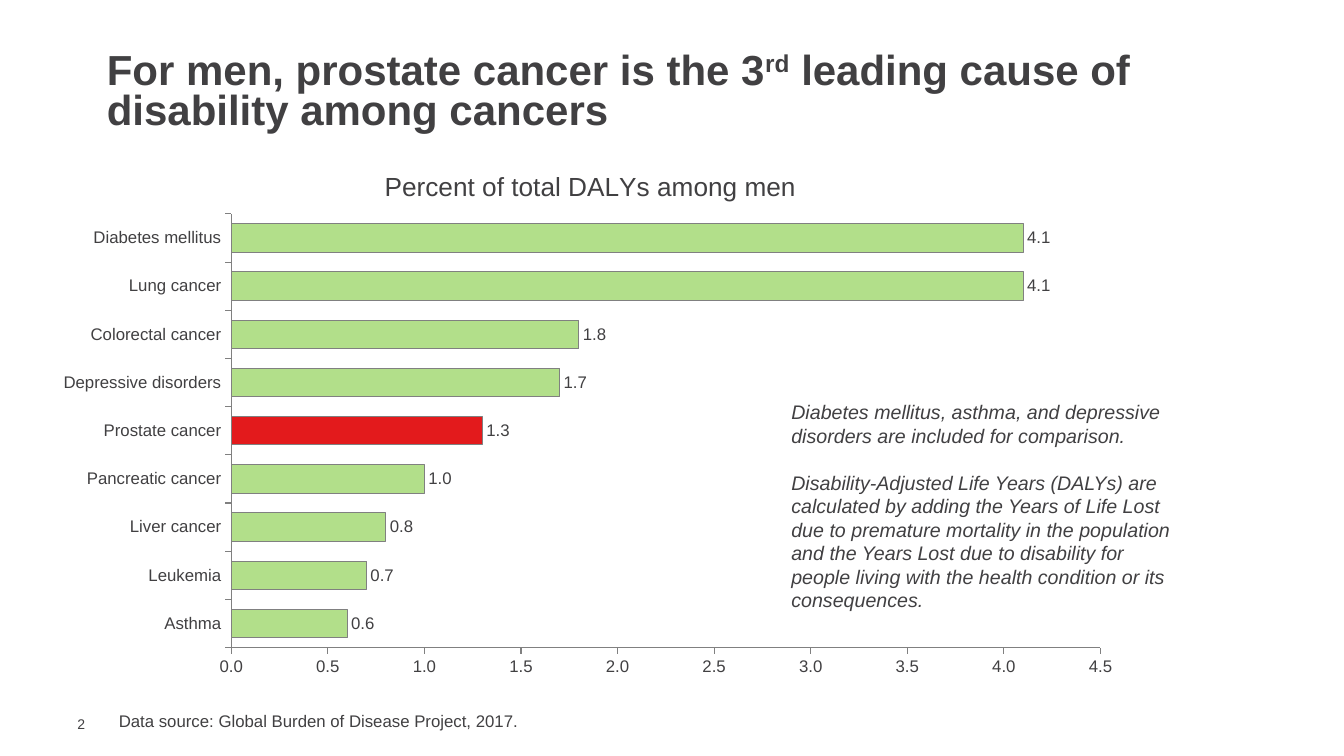
from lxml import etree
from pptx import Presentation
from pptx.chart.data import CategoryChartData
from pptx.dml.color import RGBColor
from pptx.enum.chart import (XL_CHART_TYPE as ChartType, XL_LABEL_POSITION as LabelPosition,
                             XL_TICK_MARK as TickMark)
from pptx.enum.text import MSO_ANCHOR as Anchor, PP_ALIGN as Align
from pptx.oxml.ns import qn
from pptx.util import Inches, Pt

INK, GREEN, RED, GRAY = "414042", "B2DF8A", "E31A1C", "808080"
DALYS = {
    "Asthma": 0.6,
    "Leukemia": 0.7,
    "Liver cancer": 0.8,
    "Pancreatic cancer": 1.0,
    "Prostate cancer": 1.3,
    "Depressive disorders": 1.7,
    "Colorectal cancer": 1.8,
    "Lung cancer": 4.1,
    "Diabetes mellitus": 4.1,
}
HIGHLIGHT = "Prostate cancer"


def paint(color_format, hex_color):
    color_format.rgb = RGBColor.from_string(hex_color)


def assign(target, values):
    for name, value in values.items():
        setattr(target, name, value)


def style_font(font, size, **extra):
    assign(font, {"name": "Arial", "size": Pt(size), **extra})
    paint(font.color, INK)


def style_line(line):
    line.width = Pt(0.75)
    paint(line.color, GRAY)


def place(part, box):
    assign(part, dict(zip(("left", "top", "width", "height"), map(Inches, box))))


def set_layout(parent, before, values):
    layout = etree.Element(qn("c:layout"))
    manual = etree.SubElement(layout, qn("c:manualLayout"))
    for tag, value in values.items():
        etree.SubElement(manual, qn(f"c:{tag}")).set("val", str(value))
    for old in parent.findall(qn("c:layout")):
        parent.remove(old)
    parent.find(qn(before)).addprevious(layout)


def add_heading(slide, box):
    heading = slide.shapes.title
    place(heading, box)
    frame = heading.text_frame
    assign(frame, {"word_wrap": True, "vertical_anchor": Anchor.MIDDLE})
    paragraph = frame.paragraphs[0]
    assign(paragraph, {"alignment": Align.LEFT, "line_spacing": 0.8})
    for words, baseline in (("For men, prostate cancer is the 3", 0), ("rd", 30000),
                            (" leading cause of disability among cancers", 0)):
        run = paragraph.add_run()
        run.text = words
        style_font(run.font, 30, bold=True)
        if baseline:
            run.font._element.set("baseline", str(baseline))


def add_text(slide, box, paragraphs, size, frame_format=None, gap_before_last=0, **font):
    frame = slide.shapes.add_textbox(*map(Inches, box)).text_frame
    assign(frame, {"word_wrap": True, **(frame_format or {})})
    frame.text = "\n".join(paragraphs)
    for paragraph in frame.paragraphs:
        style_font(paragraph.runs[0].font, size, **font)
    if gap_before_last:
        frame.paragraphs[-1].space_before = Pt(gap_before_last)


def add_daly_chart(slide, box):
    data = CategoryChartData(number_format="#,##0.0")
    data.categories = list(DALYS)
    data.add_series("Series 1", list(DALYS.values()))
    chart = slide.shapes.add_chart(ChartType.BAR_CLUSTERED, *map(Inches, box), data).chart
    chart.has_legend = False
    style_font(chart.font, 10)

    caption = chart.chart_title
    caption.text_frame.text = "Percent of total DALYs among men"
    style_font(caption.text_frame.paragraphs[0].runs[0].font, 18.7, bold=False)
    caption.include_in_layout = False
    set_layout(caption._element, "c:overlay",
               {"xMode": "edge", "yMode": "edge", "x": 0.31, "y": 0.04})
    set_layout(chart._chartSpace.chart.plotArea, "c:barChart",
               {"layoutTarget": "inner", "xMode": "edge", "yMode": "edge",
                "x": 0.174, "y": 0.13, "w": 0.796, "h": 0.797})

    for axis in (chart.category_axis, chart.value_axis):
        assign(axis, {"has_major_gridlines": False, "major_tick_mark": TickMark.OUTSIDE,
                      "minor_tick_mark": TickMark.NONE})
        style_font(axis.tick_labels.font, 12)
        style_line(axis.format.line)
    assign(chart.value_axis, {"minimum_scale": 0, "maximum_scale": 4.5, "major_unit": 0.5})
    number_format = {"number_format": "#,##0.0", "number_format_is_linked": False}
    assign(chart.value_axis.tick_labels, number_format)

    plot = chart.plots[0]
    assign(plot, {"gap_width": 70, "vary_by_categories": False})
    bars = plot.series[0]
    highlight = bars.points[list(DALYS).index(HIGHLIGHT)]
    for part, color in ((bars, GREEN), (highlight, RED)):
        part.format.fill.solid()
        paint(part.format.fill.fore_color, color)
        style_line(part.format.line)
    labels = bars.data_labels
    assign(labels, {"show_value": True, "position": LabelPosition.OUTSIDE_END, **number_format})
    style_font(labels.font, 12)


def build_slide(deck):
    slide = deck.slides.add_slide(deck.slide_layouts[5])
    add_text(slide, (0.67, 7.1, 0.43, 0.17), ["2"], 10,
             {"vertical_anchor": Anchor.MIDDLE, "margin_right": 0,
              "margin_top": 0, "margin_bottom": 0})
    add_text(slide, (1.08, 7, 9.92, 0.3),
             ["Data source: Global Burden of Disease Project, 2017."], 12)
    add_heading(slide, (0.96, 0.47, 11.42, 0.91))
    add_daly_chart(slide, (0.41, 1.42, 10.83, 5.4))
    add_text(slide, (7.75, 3.92, 4.08, 2.22), [
        "Diabetes mellitus, asthma, and depressive",
        "disorders are included for comparison.",
        "Disability-Adjusted Life Years (DALYs) are calculated by adding the Years of Life "
        "Lost due to premature mortality in the population and the Years Lost due to "
        "disability for people living with the health condition or its consequences.",
    ], 14, gap_before_last=16.8, italic=True)


def main():
    deck = Presentation()
    assign(deck, {"slide_width": Inches(13.33), "slide_height": Inches(7.5)})
    build_slide(deck)
    deck.save("out.pptx")


if __name__ == "__main__":
    main()
